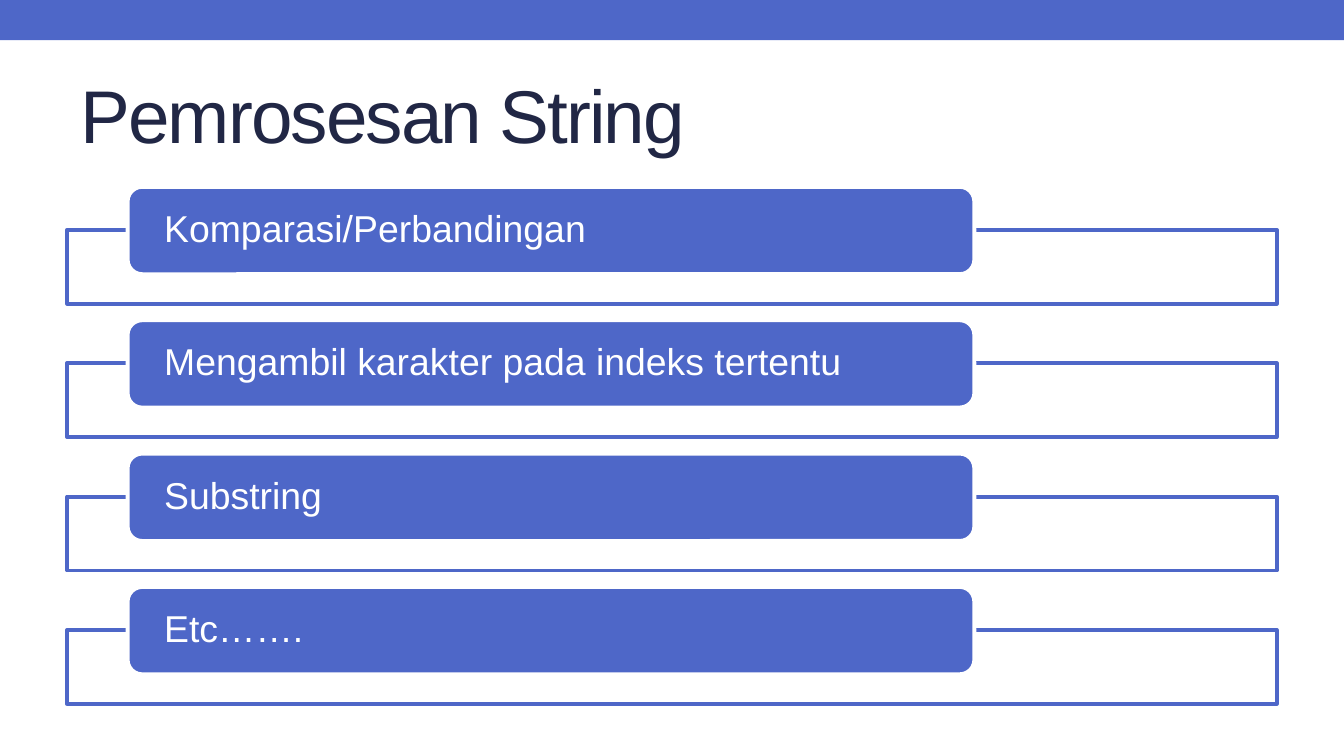
import dataclasses

import lxml.etree
import pptx
import pptx.dml.color
import pptx.enum.shapes
import pptx.enum.text
import pptx.oxml.ns
import pptx.util

Inches = pptx.util.Inches
Pt = pptx.util.Pt
Shape = pptx.enum.shapes.MSO_SHAPE
qn = pptx.oxml.ns.qn


@dataclasses.dataclass(frozen=True)
class Theme:
    accent: str = "4E67C8"
    dark: str = "212745"
    white: str = "FFFFFF"
    font: str = "Arial"
    title_size: int = 40
    item_size: int = 20
    line_width: float = 2.08


THEME = Theme()
TOPICS = [
    "Komparasi/Perbandingan",
    "Mengambil karakter pada indeks tertentu",
    "Substring",
    "Etc…….",
]


def rgb(value):
    return pptx.dml.color.RGBColor.from_string(value)


def add_box(page, kind, left, top, width, height, fill, line=None):
    box = page.shapes.add_shape(
        kind, Inches(left), Inches(top), Inches(width), Inches(height))
    box.shadow.inherit = False
    box.fill.solid()
    box.fill.fore_color.rgb = rgb(fill)
    if line:
        box.line.color.rgb = rgb(line)
        box.line.width = Pt(THEME.line_width)
    else:
        box.line.fill.background()
    return box


def write_text(box, text, size, color):
    frame = box.text_frame
    frame.word_wrap = True
    frame.vertical_anchor = pptx.enum.text.MSO_ANCHOR.MIDDLE
    para = frame.paragraphs[0]
    para.text = text
    para.alignment = pptx.enum.text.PP_ALIGN.LEFT
    para.font.name = THEME.font
    para.font.size = Pt(size)
    para.font.color.rgb = rgb(color)
    return para


def add_title(page, left, top, width, height, text):
    box = page.shapes.add_textbox(
        Inches(left), Inches(top), Inches(width), Inches(height))
    para = write_text(box, text, THEME.title_size, THEME.dark)
    # Tighten the letter spacing by one point
    para.runs[0].font._element.set("spc", "-100")


def add_topic(page, left, top, width, text):
    # Outlined frame behind the label, 90 % opaque
    frame = add_box(page, Shape.RECTANGLE, left, top + 0.32, width, 0.55,
                    THEME.white, THEME.accent)
    color = frame._element.spPr.find(qn("a:solidFill"))[0]
    lxml.etree.SubElement(color, qn("a:alpha"), val="90000")

    # Rounded label
    label = add_box(page, Shape.ROUNDED_RECTANGLE, left + 0.05 * width, top,
                    0.7 * width, 0.65, THEME.accent, THEME.white)
    para = write_text(label, text, THEME.item_size, THEME.white)
    para.line_spacing = 0.9
    label.text_frame.margin_left = label.text_frame.margin_right = Inches(0.24)
    label.text_frame.margin_top = label.text_frame.margin_bottom = 0


def add_topic_list(page, left, top, width, height, topics):
    step = height / len(topics)
    for index, topic in enumerate(topics):
        add_topic(page, left, top + index * step, width, topic)


def main():
    deck = pptx.Presentation()
    deck.slide_width = Inches(10)
    deck.slide_height = deck.slide_width * 9 // 16
    page = deck.slides.add_slide(deck.slide_layouts[6])

    # Top band, title and list
    add_box(page, Shape.RECTANGLE, 0, 0, 10, 0.3, THEME.accent)
    add_title(page, 0.5, 0.44, 9, 0.81, "Pemrosesan String")
    add_topic_list(page, 0.5, 1.39, 9, 3.97, TOPICS)

    deck.save("out.pptx")


if __name__ == "__main__":
    main()
